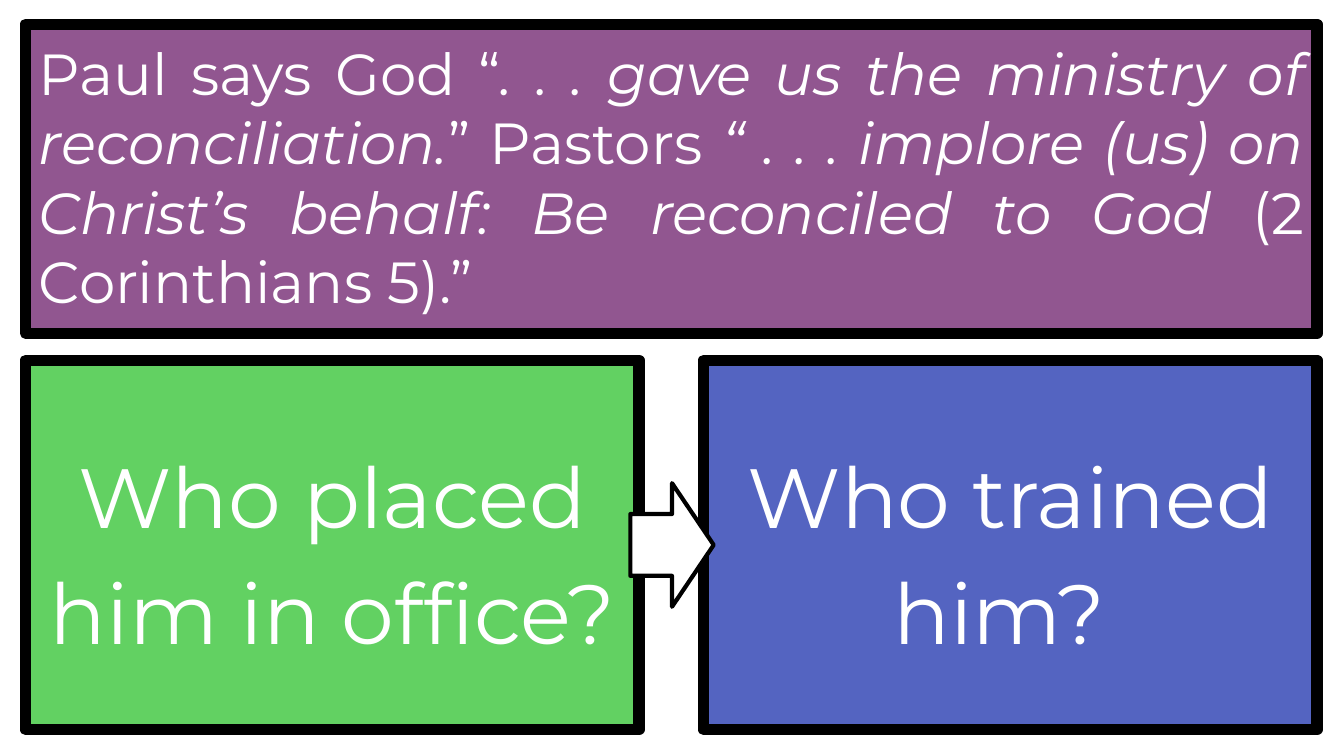
import pptx
import pptx.util
import pptx.dml.color
import pptx.enum.shapes
import pptx.enum.text

Inches = pptx.util.Inches
Pt = pptx.util.Pt
RGB = pptx.dml.color.RGBColor.from_string
SHAPE = pptx.enum.shapes.MSO_SHAPE
ALIGN = pptx.enum.text.PP_ALIGN
ANCHOR = pptx.enum.text.MSO_ANCHOR

COLORS = {
    "white": "FFFFFF",
    "black": "000000",
    "purple": "915690",
    "green": "62D162",
    "blue": "5464C1",
}
FONT = "Montserrat"

WIDTH = 10
HEIGHT = WIDTH * 9 / 16
LEFT, TOP = 0.19, 0.18
CONTENT_WIDTH = 9.61
COLUMN_GAP, ROW_GAP = 0.48, 0.2
COLUMN_WIDTH = (CONTENT_WIDTH - COLUMN_GAP) / 2
QUOTE_HEIGHT, QUESTION_HEIGHT = 2.3, 2.75
QUESTION_TOP = TOP + QUOTE_HEIGHT + ROW_GAP
ARROW_WIDTH, ARROW_HEIGHT = 0.62, 0.92


def add_block(page, kind, left, top, width, height, color, line_width):
    block = page.shapes.add_shape(
        kind, Inches(left), Inches(top), Inches(width), Inches(height))
    block.shadow.inherit = False
    block.fill.solid()
    block.fill.fore_color.rgb = RGB(COLORS[color])
    block.line.color.rgb = RGB(COLORS["black"])
    block.line.width = Pt(line_width)
    return block


def write_text(box, runs, size, align, anchor):
    frame = box.text_frame
    frame.word_wrap = True
    frame.vertical_anchor = anchor
    frame.margin_left = frame.margin_right = Inches(0.1)
    frame.margin_top = frame.margin_bottom = Inches(0.1)
    para = frame.paragraphs[0]
    para.alignment = align
    for text, italic in runs:
        span = para.add_run()
        span.text = text
        span.font.name = FONT
        span.font.size = Pt(size)
        span.font.italic = italic
        span.font.color.rgb = RGB(COLORS["white"])
    return para


deck = pptx.Presentation()
deck.slide_width = Inches(WIDTH)
deck.slide_height = Inches(HEIGHT)
page = deck.slides.add_slide(deck.slide_layouts[6])

quote_runs = [
    ("Paul says God “", False),
    (". . . gave us the ministry of reconciliation.", True),
    ("” Pastors ", False),
    ("“ . . . implore (us) on Christ’s behalf: Be reconciled to God", True),
    (" (2 Corinthians 5).”", False),
]
quote = add_block(page, SHAPE.RECTANGLE, LEFT, TOP,
                  CONTENT_WIDTH, QUOTE_HEIGHT, "purple", 6)
write_text(quote, quote_runs, 31, ALIGN.JUSTIFY, ANCHOR.TOP)

questions = [("Who placed him in office? ", "green"), ("Who trained him? ", "blue")]
for column, (question, color) in enumerate(questions):
    left = LEFT + column * (COLUMN_WIDTH + COLUMN_GAP)
    box = add_block(page, SHAPE.RECTANGLE, left, QUESTION_TOP,
                    COLUMN_WIDTH, QUESTION_HEIGHT, color, 6)
    para = write_text(box, [(question, False)], 45, ALIGN.CENTER, ANCHOR.MIDDLE)
    para.line_spacing = 1.15
    para.space_after = Pt(12)

arrow_left = (WIDTH - ARROW_WIDTH) / 2
arrow_top = QUESTION_TOP + (QUESTION_HEIGHT - ARROW_HEIGHT) / 2
add_block(page, SHAPE.RIGHT_ARROW, arrow_left, arrow_top,
          ARROW_WIDTH, ARROW_HEIGHT, "white", 2.25)

deck.save("out.pptx")
